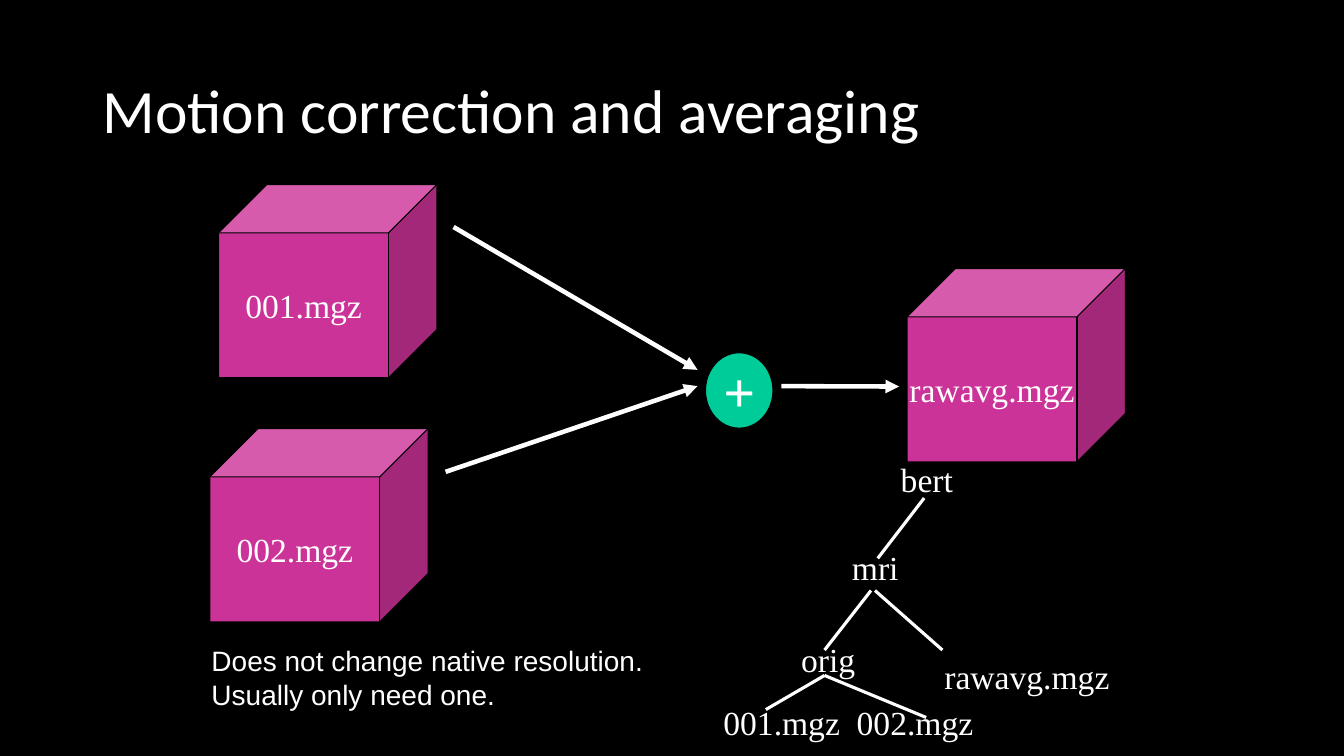
from dataclasses import dataclass

from lxml import etree
from pptx import Presentation
from pptx.dml.color import RGBColor
from pptx.enum.shapes import MSO_CONNECTOR, MSO_SHAPE
from pptx.enum.text import MSO_ANCHOR, MSO_AUTO_SIZE, PP_ALIGN
from pptx.oxml.ns import qn
from pptx.util import Cm, Pt

CUBE, OVAL = MSO_SHAPE.CUBE, MSO_SHAPE.OVAL
LINE = MSO_CONNECTOR.STRAIGHT
MIDDLE = MSO_ANCHOR.MIDDLE
LEFT, CENTER = PP_ALIGN.LEFT, PP_ALIGN.CENTER
NO_FIT = MSO_AUTO_SIZE.NONE


@dataclass(frozen=True)
class Theme:
    back: RGBColor = RGBColor(0x00, 0x00, 0x00)
    ink: RGBColor = RGBColor(0xFF, 0xFF, 0xFF)
    cube: RGBColor = RGBColor(0xCC, 0x33, 0x99)
    plus: RGBColor = RGBColor(0x00, 0xCC, 0x99)
    head: str = "Calibri"
    note: str = "Arial"
    label: str = "Times New Roman"
    head_size: int = 44
    plus_size: int = 40
    label_size: int = 24
    note_size: int = 20
    edge: float = 0.75
    arrow: float = 3.25
    branch: float = 2.25


THEME = Theme()

# Left, top and label of each volume
CUBES = [
    (5.51, 4.65, "001.mgz"),
    (5.29, 10.8, "002.mgz"),
    (22.86, 6.77, "rawavg.mgz"),
]
# Start and end points
ARROWS = [
    (11.23, 11.89, 17.58, 9.73),
    (11.43, 5.72, 17.58, 9.32),
    (19.69, 9.73, 22.66, 9.74),
]
# Left, top, width and name in the folder tree
NODES = [
    (22.45, 11.43, 2, "bert"),
    (21.22, 13.65, 2, "mri"),
    (19.94, 15.98, 2, "orig"),
    (23.55, 16.4, 5, "rawavg.mgz"),
    (17.98, 17.55, 7.2, "001.mgz\t002.mgz"),
]
BRANCHES = [
    (22.12, 14.07, 23.29, 12.55),
    (20.78, 16.38, 21.95, 14.88),
    (23.75, 16.38, 22.05, 14.88),
    (19.3, 17.88, 20.78, 17.02),
    (23.34, 18.08, 20.78, 17.02),
]
LEAF_GAP = Cm(3.36)


def set_tab(para, pos):
    stops = etree.SubElement(para._p.get_or_add_pPr(), qn("a:tabLst"))
    etree.SubElement(stops, qn("a:tab"), pos=str(pos), algn="l")


def write(frame, text, face, size, align=LEFT, bold=False):
    frame.text = text
    for para in frame.paragraphs:
        if "\t" in para.text:
            set_tab(para, LEAF_GAP)
        para.alignment = align
        font = para.font
        font.name, font.size, font.bold = face, Pt(size), bold
        font.color.rgb = THEME.ink


def add_title(slide, text):
    title = slide.shapes.title
    title.left, title.top = Cm(2.33), Cm(1.01)
    title.width, title.height = Cm(29.21), Cm(3.68)
    frame = title.text_frame
    frame.auto_size = NO_FIT
    frame.vertical_anchor = MIDDLE
    write(frame, text, THEME.head, THEME.head_size)
    frame.paragraphs[0].line_spacing = 0.9


def add_solid(slide, kind, box, fill, text, size, bold=False):
    shape = slide.shapes.add_shape(kind, *map(Cm, box))
    shape.shadow.inherit = False
    shape.fill.solid()
    shape.fill.fore_color.rgb = fill
    shape.line.color.rgb = THEME.back
    shape.line.width = Pt(THEME.edge)
    frame = shape.text_frame
    frame.word_wrap = False
    frame.vertical_anchor = MIDDLE
    write(frame, text, THEME.label, size, CENTER, bold)


def add_label(slide, box, text, face, size):
    frame = slide.shapes.add_textbox(*map(Cm, box)).text_frame
    frame.word_wrap = True
    write(frame, text, face, size)


def add_line(slide, ends, width, arrow=False):
    line = slide.shapes.add_connector(LINE, *map(Cm, ends))
    line.line.color.rgb = THEME.ink
    line.line.width = Pt(width)
    props = line.element.spPr
    if arrow:
        stroke = props.find(qn("a:ln"))
        etree.SubElement(stroke, qn("a:tailEnd"), type="triangle")
    etree.SubElement(props, qn("a:effectLst"))


def main():
    deck = Presentation()
    deck.slide_width, deck.slide_height = Cm(33.87), Cm(19.05)
    slide = deck.slides.add_slide(deck.slide_layouts[5])
    slide.background.fill.solid()
    slide.background.fill.fore_color.rgb = THEME.back
    add_title(slide, "Motion correction and averaging")

    # Volumes merged into one average
    for left, top, name in CUBES:
        add_solid(slide, CUBE, (left, top, 5.5, 4.87), THEME.cube,
                  name, THEME.label_size)
    add_solid(slide, OVAL, (17.78, 8.89, 1.7, 1.9), THEME.plus,
              "+", THEME.plus_size, bold=True)
    for ends in ARROWS:
        add_line(slide, ends, THEME.arrow, arrow=True)

    # Remark
    add_label(slide, (5.08, 16.09, 11.8, 1.98),
              "Does not change native resolution.\nUsually only need one.",
              THEME.note, THEME.note_size)

    # Folder tree
    for left, top, width, name in NODES:
        add_label(slide, (left, top, width, 1.3), name,
                  THEME.label, THEME.label_size)
    for ends in BRANCHES:
        add_line(slide, ends, THEME.branch)

    deck.save("out.pptx")


if __name__ == "__main__":
    main()
